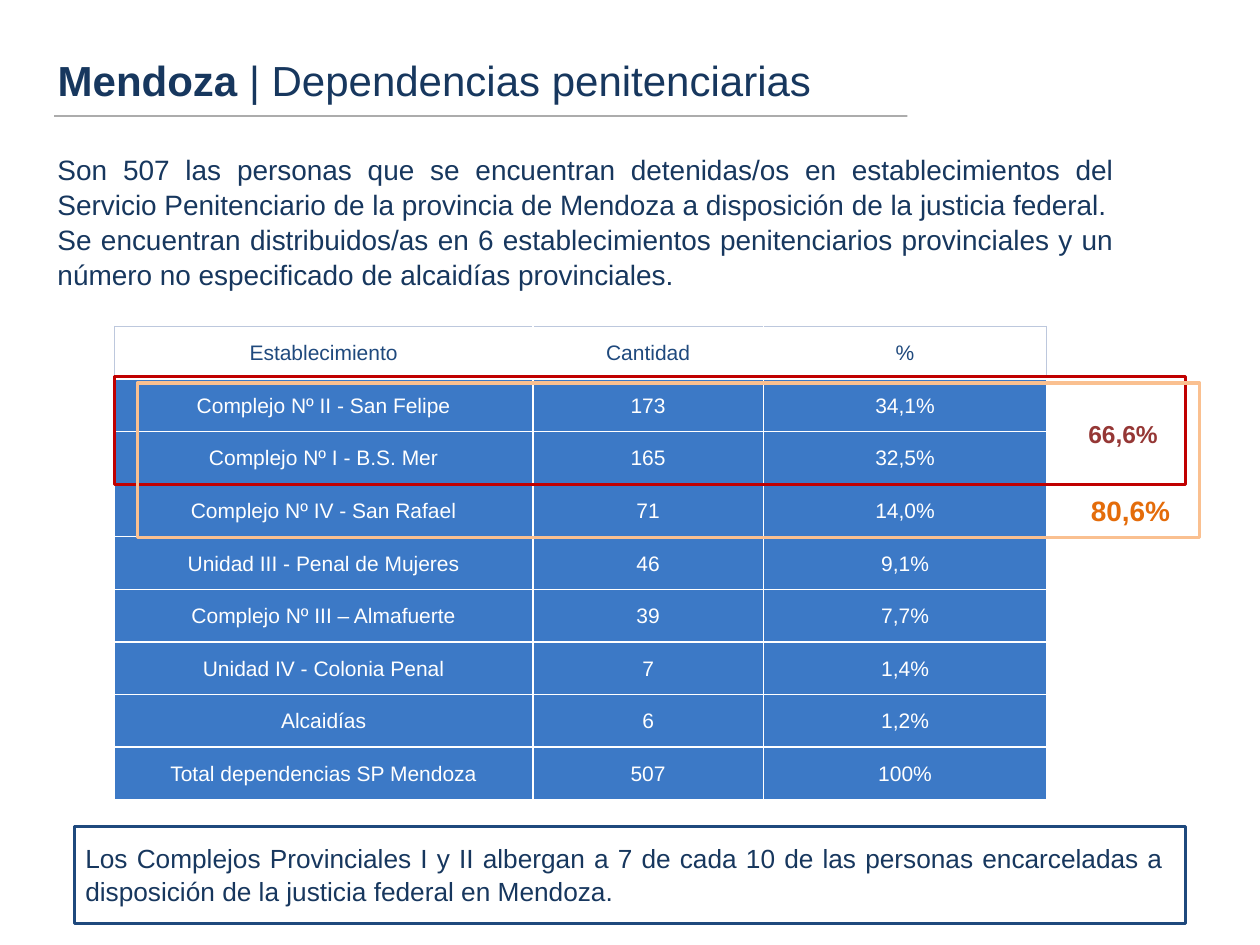
from lxml.etree import SubElement
from pptx import Presentation
from pptx.dml.color import RGBColor
from pptx.enum.shapes import MSO_CONNECTOR, MSO_SHAPE
from pptx.enum.text import MSO_ANCHOR, MSO_AUTO_SIZE, PP_ALIGN
from pptx.oxml.ns import qn
from pptx.util import Cm, Pt

NAVY = RGBColor(0x17, 0x37, 0x5E)
BLUE = RGBColor(0x1F, 0x49, 0x7D)
CELL_BLUE = RGBColor(0x3C, 0x79, 0xC6)
PALE_BLUE = RGBColor(0xBD, 0xC8, 0xDD)
WHITE = RGBColor(0xFF, 0xFF, 0xFF)
BLACK = RGBColor(0, 0, 0)
RED = RGBColor(0xC0, 0, 0)
DARK_RED = RGBColor(0x95, 0x37, 0x35)
PEACH = RGBColor(0xFA, 0xC0, 0x90)
ORANGE = RGBColor(0xE4, 0x6C, 0x0A)

ROWS = [
    ("Establecimiento", "Cantidad", "%"),
    ("Complejo Nº II - San Felipe", "173", "34,1%"),
    ("Complejo Nº I - B.S. Mer", "165", "32,5%"),
    ("Complejo Nº IV - San Rafael", "71", "14,0%"),
    ("Unidad III - Penal de Mujeres", "46", "9,1%"),
    ("Complejo Nº III – Almafuerte", "39", "7,7%"),
    ("Unidad IV - Colonia Penal", "7", "1,4%"),
    ("Alcaidías", "6", "1,2%"),
    ("Total dependencias SP Mendoza", "507", "100%"),
]
COLUMN_WIDTHS = (8.43, 4.65, 5.71)
ROW_HEIGHT = 1.06


class PageBuilder:
    """Adds styled elements to one page; all lengths are in centimetres."""

    font_name = "Arial"

    def __init__(self, page):
        self.page = page

    def style(self, para, size, color, bold=False, align=PP_ALIGN.LEFT):
        para.font.name = self.font_name
        para.font.size = Pt(size)
        para.font.color.rgb = color
        para.font.bold = bold
        para.alignment = align

    def title(self, place, bold_part, rest):
        box = self.page.shapes.title
        box.left, box.top, box.width, box.height = map(Cm, place)
        frame = box.text_frame
        frame.vertical_anchor = MSO_ANCHOR.TOP
        frame.auto_size = MSO_AUTO_SIZE.NONE
        para = frame.paragraphs[0]
        self.style(para, 24, NAVY)
        for text, bold in ((bold_part, True), (rest, False)):
            span = para.add_run()
            span.text = text
            span.font.bold = bold

    def text(self, place, lines, size, color, bold=False,
             align=PP_ALIGN.LEFT, wrap=True, spacing=1.0):
        frame = self.page.shapes.add_textbox(*map(Cm, place)).text_frame
        frame.word_wrap = wrap
        for index, line in enumerate(lines):
            para = frame.add_paragraph() if index else frame.paragraphs[0]
            para.text = line
            para.line_spacing = spacing
            self.style(para, size, color, bold, align)

    def rule(self, left, top, right):
        line = self.page.shapes.add_connector(
            MSO_CONNECTOR.STRAIGHT, Cm(left), Cm(top), Cm(right), Cm(top))
        line.line.color.rgb = BLACK
        line.line.width = Pt(0.75)
        properties = line._element.spPr
        color = properties.find(".//" + qn("a:srgbClr"))
        SubElement(color, qn("a:alpha"), val="50000")
        SubElement(properties, qn("a:effectLst"))

    def outline(self, place, color):
        box = self.page.shapes.add_shape(MSO_SHAPE.RECTANGLE, *map(Cm, place))
        box.shadow.inherit = False
        box.fill.background()
        box.line.color.rgb = color
        box.line.width = Pt(2)

    def border(self, cell, side, color, width):
        line = SubElement(cell._tc.get_or_add_tcPr(), qn("a:ln" + side),
                          w=str(Pt(width)))
        fill = SubElement(line, qn("a:solidFill"))
        SubElement(fill, qn("a:srgbClr"), val=str(color))

    def table(self, left, top, rows, widths, row_height):
        table = self.page.shapes.add_table(
            len(rows), len(widths), Cm(left), Cm(top),
            Cm(sum(widths)), Cm(row_height * len(rows))).table
        for column, width in zip(table.columns, widths):
            column.width = Cm(width)
        last = len(widths) - 1
        for r, values in enumerate(rows):
            table.rows[r].height = Cm(row_height)
            for c, value in enumerate(values):
                cell = table.cell(r, c)
                header = r == 0
                tinted = {"L": c == 0, "R": c == last, "T": True, "B": False}
                for side, outer in tinted.items():
                    if header and outer:
                        self.border(cell, side, PALE_BLUE, 0.75)
                    else:
                        self.border(cell, side, WHITE, 1)
                cell.fill.solid()
                cell.fill.fore_color.rgb = WHITE if header else CELL_BLUE
                cell.vertical_anchor = MSO_ANCHOR.MIDDLE
                cell.margin_left = cell.margin_right = cell.margin_top = Cm(0.03)
                cell.margin_bottom = 0
                para = cell.text_frame.paragraphs[0]
                para.text = value
                self.style(para, 12, BLUE if header else WHITE,
                           align=PP_ALIGN.CENTER)


def main():
    deck = Presentation()
    deck.slide_width, deck.slide_height = Cm(25.4), Cm(19.05)
    builder = PageBuilder(deck.slides.add_slide(deck.slide_layouts[5]))

    builder.title((0.91, 0.97, 18.8, 1.57), "Mendoza ",
                  "| Dependencias penitenciarias")
    builder.rule(1.09, 2.34, 18.29)
    builder.text(
        (0.91, 2.92, 21.79, 2.01),
        ["Son 507 las personas que se encuentran detenidas/os en "
         "establecimientos del Servicio Penitenciario de la provincia de "
         "Mendoza a disposición de la justicia federal.",
         "Se encuentran distribuidos/as en 6 establecimientos penitenciarios "
         "provinciales y un número no especificado de alcaidías provinciales."],
        16, NAVY, align=PP_ALIGN.JUSTIFY, spacing=1.04)

    builder.table(2.31, 6.58, ROWS, COLUMN_WIDTHS, ROW_HEIGHT)
    builder.outline((2.31, 7.59, 21.59, 2.18), RED)
    builder.text((21.69, 8.33, 1.93, 0.86), ["66,6%"], 14, DARK_RED,
                 bold=True, wrap=False)
    builder.outline((2.77, 7.72, 21.41, 3.12), PEACH)
    builder.text((21.74, 9.83, 2.13, 0.94), ["80,6%"], 16, ORANGE,
                 bold=True, wrap=False)

    builder.text(
        (1.47, 16.81, 22.23, 1.55),
        ["Los Complejos Provinciales I y II albergan a 7 de cada 10 de las "
         "personas encarceladas a disposición de la justicia federal en "
         "Mendoza."],
        15, NAVY, align=PP_ALIGN.JUSTIFY, spacing=1.06)
    builder.outline((1.5, 16.66, 22.4, 1.96), BLUE)

    deck.save("out.pptx")


if __name__ == "__main__":
    main()
